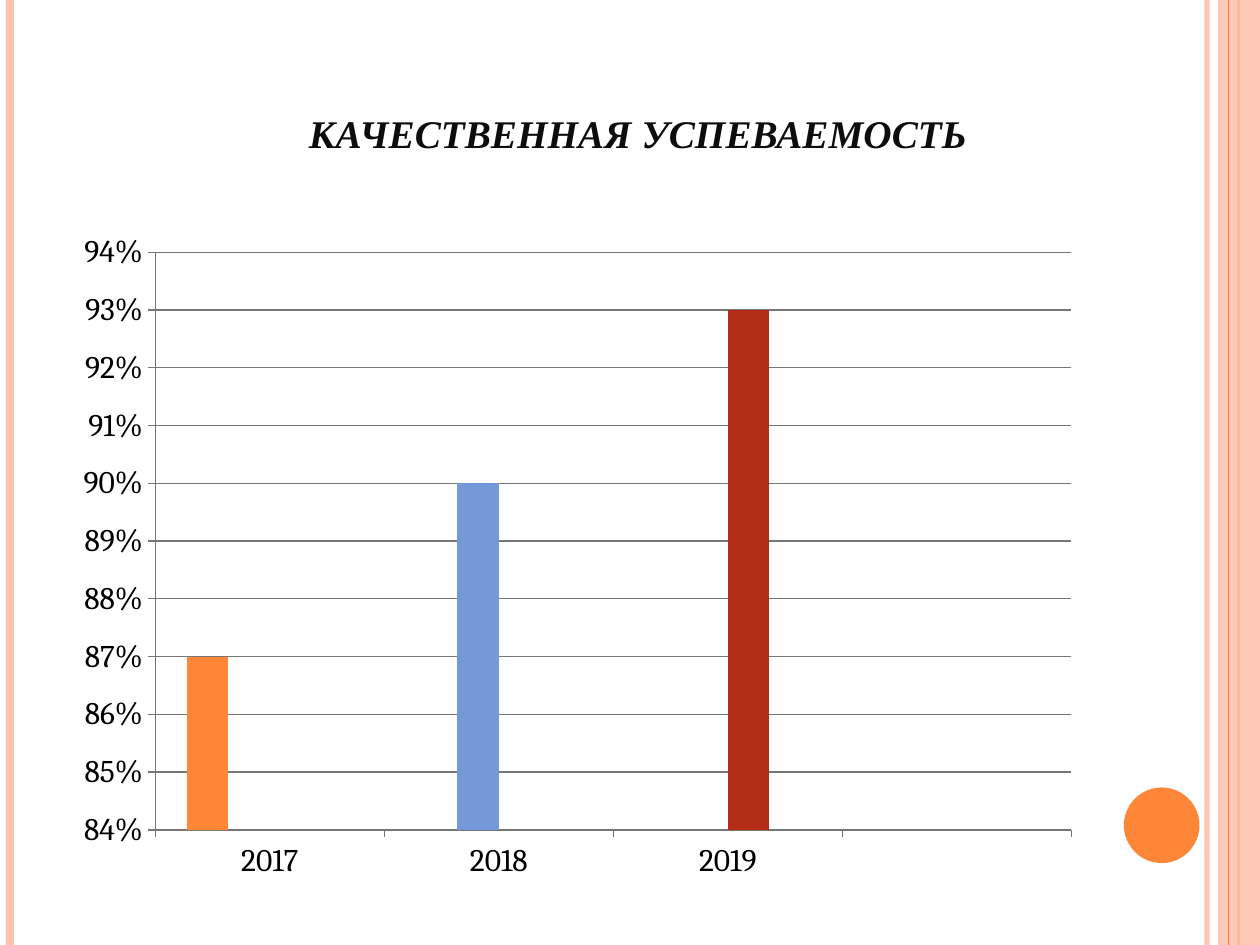
"""Build a slide with a column chart of attainment by year."""
import dataclasses
import typing

import lxml.etree
import pptx
import pptx.chart.data
import pptx.dml.color
import pptx.enum.chart
import pptx.enum.shapes
import pptx.enum.text
import pptx.oxml.ns
import pptx.util

Pt = pptx.util.Pt


@dataclasses.dataclass(frozen=True)
class Theme:
    accent: str = "FE8637"
    pale: str = "FEC3AE"
    title: str = "0D0D0D"
    text: str = "000000"
    grid: str = "767676"
    title_font: str = "Times New Roman"
    chart_font: str = "Cambria"
    title_size: float = 28
    chart_size: float = 18
    grid_width: float = 0.75


@dataclasses.dataclass(frozen=True)
class Box:
    left: float
    top: float
    width: float
    height: float

    def lengths(self) -> tuple:
        return tuple(Pt(value) for value in dataclasses.astuple(self))


@dataclasses.dataclass(frozen=True)
class Stripe:
    x: float
    width: float
    color: str
    opacity: int = 100


@dataclasses.dataclass(frozen=True)
class Column:
    name: str
    values: tuple
    color: str


THEME = Theme()
WIDTH, HEIGHT = 720, 540
TITLE_BOX = Box(105.12, 21.6, 519.12, 72.72)
CHART_BOX = Box(36, 126, 588, 384)
BAND_BOX = Box(696, 0, 24, HEIGHT)
DISC_BOX = Box(642.24, 450, 43.2, 43.2)
OUTER_STRIPES = (
    Stripe(689.76, 3, THEME.pale, 93),
    Stripe(5.76, 4.5, THEME.pale),
    Stripe(707.76, 1.5, THEME.accent),
)
INNER_STRIPE = Stripe(702, 0.75, THEME.accent)
YEARS = ("2017", "2018", "2019", "")
COLUMNS = (
    Column("Series 1", (0.87, None, None, None), THEME.accent),
    Column("Series 2", (None, 0.9, None, None), "7598D9"),
    Column("Series 3", (None, None, 0.93, None), "B32C16"),
    Column("Series 4", (None, None, None, None), "F5CD2D"),
)


def rgb(color: str) -> pptx.dml.color.RGBColor:
    return pptx.dml.color.RGBColor.from_string(color)


def set_opacity(element: typing.Any, percent: int) -> None:
    if percent < 100:
        color = next(element.iter(pptx.oxml.ns.qn("a:srgbClr")))
        alpha = lxml.etree.SubElement(color, pptx.oxml.ns.qn("a:alpha"))
        alpha.set("val", str(percent * 1000))


def add_stripe(slide: typing.Any, stripe: Stripe) -> None:
    connector = slide.shapes.add_connector(
        pptx.enum.shapes.MSO_CONNECTOR.STRAIGHT,
        Pt(stripe.x), Pt(0), Pt(stripe.x), Pt(HEIGHT),
    )
    connector.line.color.rgb = rgb(stripe.color)
    connector.line.width = Pt(stripe.width)
    properties = connector._element.spPr
    set_opacity(properties, stripe.opacity)
    lxml.etree.SubElement(properties, pptx.oxml.ns.qn("a:effectLst"))


def add_filled(slide: typing.Any, kind: typing.Any, box: Box, color: str, opacity: int = 100) -> None:
    shape = slide.shapes.add_shape(kind, *box.lengths())
    shape.shadow.inherit = False
    shape.fill.solid()
    shape.fill.fore_color.rgb = rgb(color)
    shape.line.fill.background()
    set_opacity(shape._element.spPr, opacity)


def write_text(frame: typing.Any, text: str, *, font: str, size: float, color: str,
               bold: bool = False, italic: bool = False, small_caps: bool = False) -> None:
    paragraph = frame.paragraphs[0]
    paragraph.alignment = pptx.enum.text.PP_ALIGN.CENTER
    run = paragraph.add_run()
    run.text = text
    run.font.name = font
    run.font.size = Pt(size)
    run.font.color.rgb = rgb(color)
    run.font.bold = bold
    run.font.italic = italic
    if small_caps:
        run._r.get_or_add_rPr().set("cap", "small")


def add_title(slide: typing.Any) -> None:
    title = slide.shapes.title
    title.left, title.top, title.width, title.height = TITLE_BOX.lengths()
    frame = title.text_frame
    frame.word_wrap = True
    frame.auto_size = pptx.enum.text.MSO_AUTO_SIZE.NONE
    frame.vertical_anchor = pptx.enum.text.MSO_ANCHOR.BOTTOM
    write_text(frame, "качественная успеваемость", font=THEME.title_font, size=THEME.title_size,
               color=THEME.title, bold=True, italic=True, small_caps=True)


def format_line(line: typing.Any) -> None:
    line.color.rgb = rgb(THEME.grid)
    line.width = Pt(THEME.grid_width)


def add_chart(slide: typing.Any) -> None:
    data = pptx.chart.data.CategoryChartData(number_format="0%")
    data.categories = YEARS
    for column in COLUMNS:
        data.add_series(column.name, column.values)
    chart = slide.shapes.add_chart(
        pptx.enum.chart.XL_CHART_TYPE.COLUMN_CLUSTERED, *CHART_BOX.lengths(), data
    ).chart
    chart.has_legend = False
    chart.has_title = False
    chart.font.name = THEME.chart_font
    chart.font.size = Pt(THEME.chart_size)
    chart.font.color.rgb = rgb(THEME.text)
    plot = chart.plots[0]
    plot.gap_width = 150
    plot.overlap = 0
    plot.vary_by_categories = False
    for series, column in zip(plot.series, COLUMNS):
        series.format.fill.solid()
        series.format.fill.fore_color.rgb = rgb(column.color)
        series.invert_if_negative = False
    for axis in (chart.category_axis, chart.value_axis):
        axis.major_tick_mark = pptx.enum.chart.XL_TICK_MARK.OUTSIDE
        format_line(axis.format.line)
    values = chart.value_axis
    values.minimum_scale, values.maximum_scale, values.major_unit = 0.84, 0.94, 0.01
    values.has_major_gridlines = True
    values.tick_labels.number_format = "0%"
    values.tick_labels.number_format_is_linked = False
    format_line(values.major_gridlines.format.line)


def main() -> None:
    presentation = pptx.Presentation()
    presentation.slide_width, presentation.slide_height = Pt(WIDTH), Pt(HEIGHT)
    slide = presentation.slides.add_slide(presentation.slide_layouts[5])
    for stripe in OUTER_STRIPES:
        add_stripe(slide, stripe)
    add_filled(slide, pptx.enum.shapes.MSO_SHAPE.RECTANGLE, BAND_BOX, THEME.pale, 87)
    add_stripe(slide, INNER_STRIPE)
    add_filled(slide, pptx.enum.shapes.MSO_SHAPE.OVAL, DISC_BOX, THEME.accent)
    add_title(slide)
    add_chart(slide)
    presentation.save("out.pptx")


if __name__ == "__main__":
    main()
